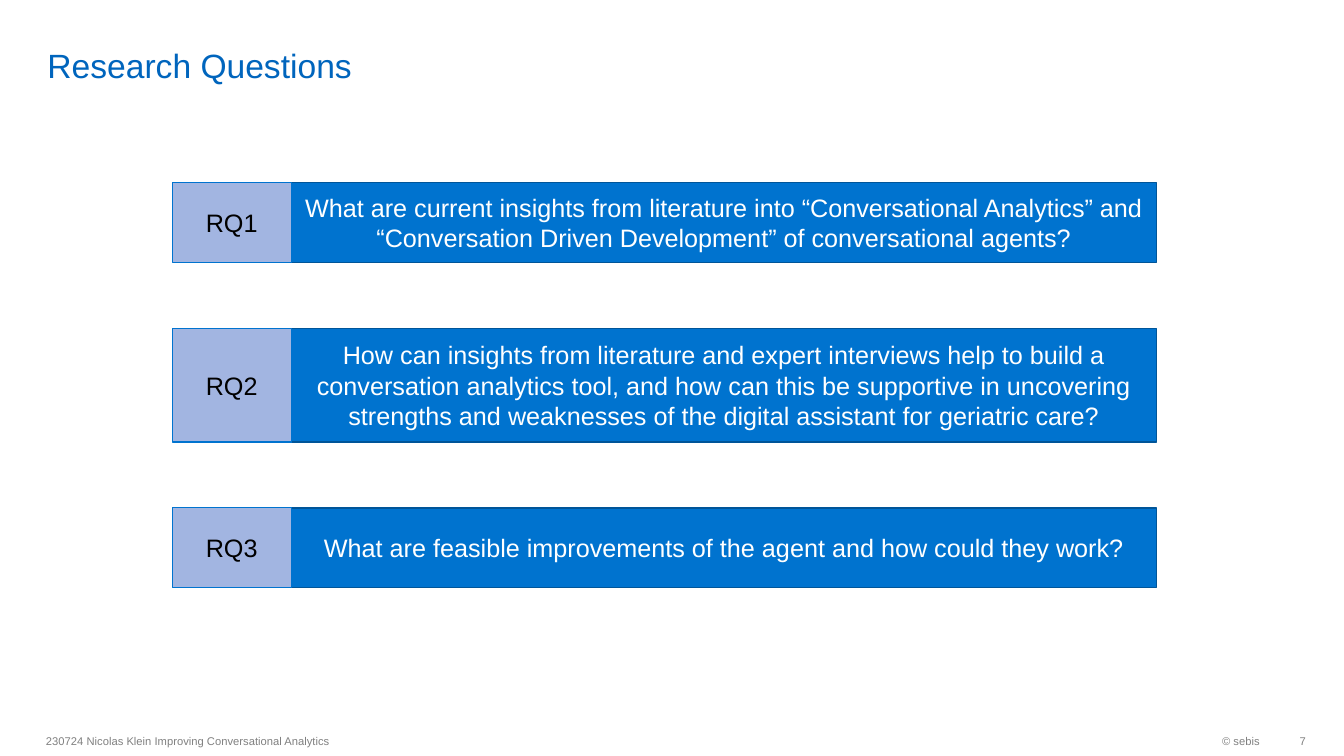
"""Build the slide that lists the three research questions."""
from dataclasses import dataclass

from pptx import Presentation
from pptx.dml.color import RGBColor
from pptx.enum.shapes import MSO_SHAPE as Shape
from pptx.enum.text import MSO_ANCHOR as Anchor, MSO_AUTO_SIZE as AutoSize, PP_ALIGN as Align
from pptx.slide import Slide
from pptx.text.text import TextFrame
from pptx.util import Cm, Pt


@dataclass(frozen=True)
class Style:
    size: float
    color: str
    fill: str = ""
    line: str = ""
    line_width: float = 0


@dataclass(frozen=True)
class Theme:
    font: str = "Arial"
    title: Style = Style(24, "0065BD")
    footer: Style = Style(8, "808080")
    label: Style = Style(18, "000000", "A2B5E1", "0073CF", 0.75)
    question: Style = Style(18, "FFFFFF", "0073CF", "005599", 0.85)


@dataclass(frozen=True)
class Box:
    left: float
    top: float
    width: float
    height: float

    def emu(self) -> tuple[Cm, Cm, Cm, Cm]:
        return Cm(self.left), Cm(self.top), Cm(self.width), Cm(self.height)


@dataclass(frozen=True)
class Question:
    text: str
    height: float


@dataclass(frozen=True)
class Footer:
    text: str
    box: Box
    align: Align
    right_inset: float = 0.25


THEME = Theme()
TITLE_BOX = Box(0.94, 0.13, 29.41, 2.01)
ROW_LEFT, ROW_TOP, ROW_GAP = 4.34, 4.6, 1.66
LABEL_WIDTH, QUESTION_WIDTH = 3, 21.8

QUESTIONS = (
    Question("What are current insights from literature into “Conversational Analytics” and "
             "“Conversation Driven Development” of conversational agents?", 2.01),
    Question("How can insights from literature and expert interviews help to build a "
             "conversation analytics tool, and how can this be supportive in uncovering "
             "strengths and weaknesses of the digital assistant for geriatric care?", 2.87),
    Question("What are feasible improvements of the agent and how could they work?", 2.01),
)
FOOTERS = (
    Footer("© sebis", Box(26.06, 18.26, 5.94, 0.81), Align.RIGHT),
    Footer("230724 Nicolas Klein Improving Conversational Analytics",
           Box(0.91, 18.26, 16, 0.81), Align.LEFT),
    Footer("7", Box(32, 18.26, 0.91, 0.81), Align.RIGHT, 0),
)


def write(tf: TextFrame, text: str, style: Style, align: Align, anchor: Anchor) -> None:
    tf.text = text
    tf.word_wrap = True
    tf.auto_size = AutoSize.NONE
    tf.vertical_anchor = anchor
    p = tf.paragraphs[0]
    p.alignment = align
    p.font.name = THEME.font
    p.font.size = Pt(style.size)
    p.font.color.rgb = RGBColor.from_string(style.color)


def add_title(s: Slide, text: str) -> None:
    sp = s.shapes.title
    sp.left, sp.top, sp.width, sp.height = TITLE_BOX.emu()
    tf = sp.text_frame
    tf.margin_top = tf.margin_bottom = 0
    write(tf, text, THEME.title, Align.LEFT, Anchor.BOTTOM)


def add_panel(s: Slide, box: Box, text: str, style: Style) -> None:
    sp = s.shapes.add_shape(Shape.RECTANGLE, *box.emu())
    sp.shadow.inherit = False
    sp.fill.solid()
    sp.fill.fore_color.rgb = RGBColor.from_string(style.fill)
    sp.line.color.rgb = RGBColor.from_string(style.line)
    sp.line.width = Pt(style.line_width)
    write(sp.text_frame, text, style, Align.CENTER, Anchor.MIDDLE)


def add_questions(s: Slide) -> None:
    top = ROW_TOP
    for number, question in enumerate(QUESTIONS, 1):
        add_panel(s, Box(ROW_LEFT + LABEL_WIDTH, top, QUESTION_WIDTH, question.height),
                  question.text, THEME.question)
        add_panel(s, Box(ROW_LEFT, top, LABEL_WIDTH, question.height),
                  f"RQ{number}", THEME.label)
        top += question.height + ROW_GAP


def add_footer(s: Slide, footer: Footer) -> None:
    tf = s.shapes.add_textbox(*footer.box.emu()).text_frame
    tf.margin_right = Cm(footer.right_inset)
    write(tf, footer.text, THEME.footer, footer.align, Anchor.MIDDLE)


def main() -> None:
    prs = Presentation()
    prs.slide_width, prs.slide_height = Cm(33.87), Cm(19.05)
    s = prs.slides.add_slide(prs.slide_layouts.get_by_name("Title Only"))
    add_title(s, "Research Questions")
    for footer in FOOTERS:
        add_footer(s, footer)
    add_questions(s)
    prs.save("out.pptx")


if __name__ == "__main__":
    main()
